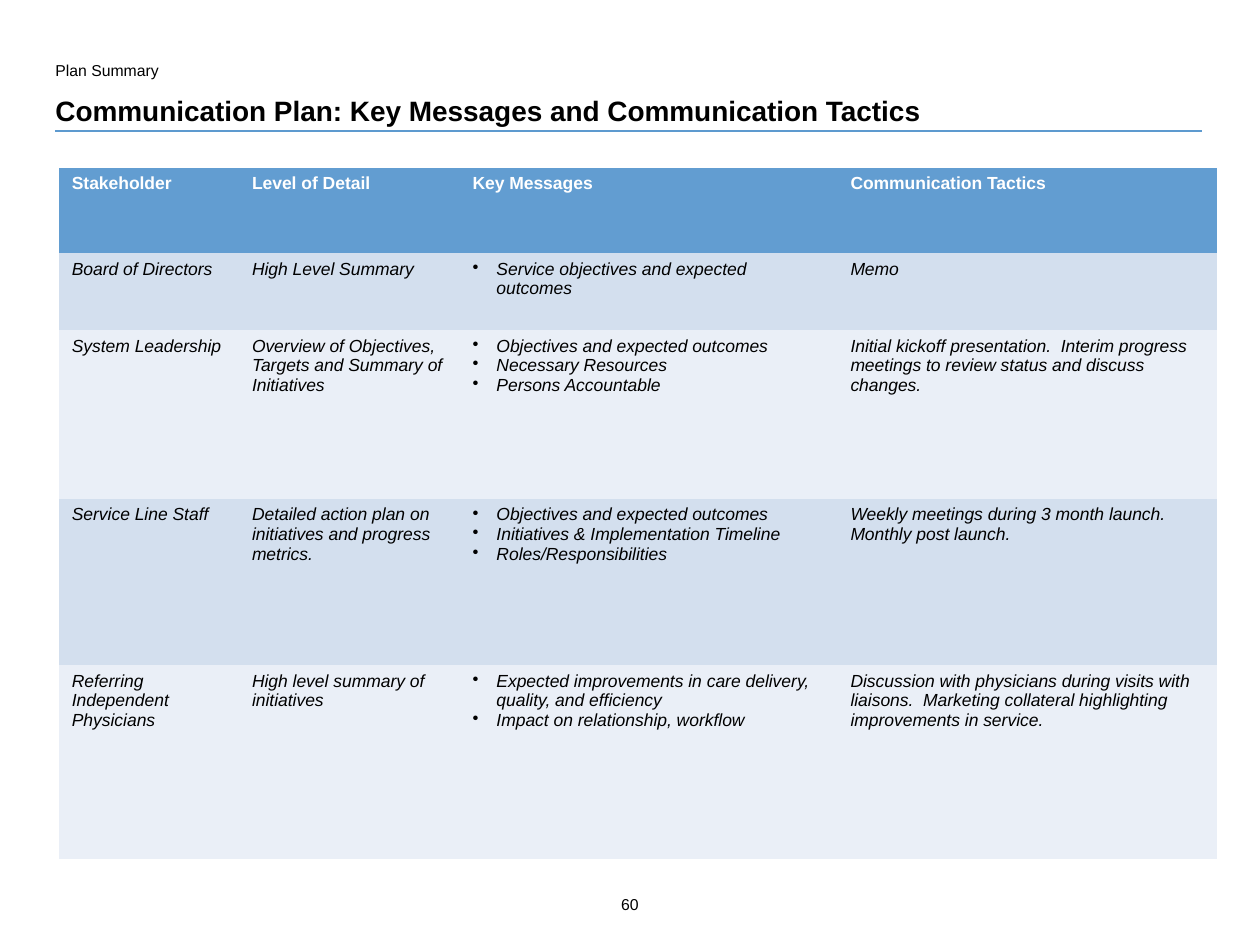
"""Build the communication plan slide with its stakeholder table."""
from lxml import etree
from pptx import Presentation
from pptx.dml.color import RGBColor
from pptx.enum.shapes import MSO_CONNECTOR
from pptx.enum.text import MSO_ANCHOR, MSO_AUTO_SIZE, PP_ALIGN
from pptx.oxml.ns import qn
from pptx.util import Inches, Pt

STRAIGHT = MSO_CONNECTOR.STRAIGHT
TOP, BOTTOM = MSO_ANCHOR.TOP, MSO_ANCHOR.BOTTOM
LEFT, CENTER = PP_ALIGN.LEFT, PP_ALIGN.CENTER
NO_GRID = "{2D5ABB26-0587-4C30-8999-92F81FD0307C}"
HEADER_FILL, BANDS = "629DD1", ("D3DFEE", "EAEFF7")


def rgb(value):
    return RGBColor.from_string(value)


def write(tf, text, size=10, color="000000", bold=False, italic=False,
          align=LEFT, anchor=TOP, bullet=None):
    tf.vertical_anchor = anchor
    lines = [text] if isinstance(text, str) else text
    for i, line in enumerate(lines):
        p = tf.add_paragraph() if i else tf.paragraphs[0]
        p.alignment = align
        p.space_before = Pt(0)
        pPr = p._p.get_or_add_pPr()
        indent = Inches(0.19) if bullet else 0
        pPr.set("marL", str(indent))
        pPr.set("indent", str(-indent))
        if bullet:
            etree.SubElement(pPr, qn("a:buChar")).set("char", bullet)
        else:
            etree.SubElement(pPr, qn("a:buNone"))
        r = p.add_run()
        r.text = line
        r.font.name, r.font.size = "Arial", Pt(size)
        r.font.bold, r.font.italic = bold, italic
        r.font.color.rgb = rgb(color)


prs = Presentation()
prs.slide_width, prs.slide_height = Inches(10), Inches(7.5)
s = prs.slides.add_slide(prs.slide_layouts[1])

rule = s.shapes.add_connector(STRAIGHT, Inches(0.44), Inches(1.04), Inches(9.54), Inches(1.04))
rule.line.color.rgb = rgb("5D9ACF")
rule.line.width = Pt(0.75)
etree.SubElement(rule.element.spPr, qn("a:effectLst"))

title, section = s.shapes.title, s.placeholders[1]
number = s.shapes.add_textbox(0, 0, 0, 0)
for sp, box, margins, text, fmt in [
    (title, (0.44, 0.74, 9.09, 0.27), (0, 0),
     "Communication Plan: Key Messages and Communication Tactics",
     {"size": 16, "bold": True, "anchor": BOTTOM}),
    (section, (0.44, 0.44, 2.89, 0.2), (0, 0.04), "Plan Summary", {"size": 9}),
    (number, (4.66, 7.06, 0.68, 0.26), (0.04, 0.04), "60", {"size": 9, "align": CENTER}),
]:
    sp.left, sp.top, sp.width, sp.height = map(Inches, box)
    tf = sp.text_frame
    tf.word_wrap, tf.auto_size = True, MSO_AUTO_SIZE.NONE
    tf.margin_left = tf.margin_right = Inches(margins[0])
    tf.margin_top = tf.margin_bottom = Inches(margins[1])
    write(tf, text, **fmt)

rows = [
    ("Stakeholder", "Level of Detail", "Key Messages", "Communication Tactics"),
    ("Board of Directors", "High Level Summary",
     ["Service objectives and expected outcomes"], "Memo"),
    ("System Leadership", "Overview of Objectives, Targets and Summary of Initiatives",
     ["Objectives and expected outcomes", "Necessary Resources", "Persons Accountable"],
     "Initial kickoff presentation.  Interim progress meetings to review status "
     "and discuss changes."),
    ("Service Line Staff", "Detailed action plan on initiatives and progress metrics.",
     ["Objectives and expected outcomes", "Initiatives & Implementation Timeline",
      "Roles/Responsibilities"],
     "Weekly meetings during 3 month launch.  Monthly post launch."),
    ("Referring Independent Physicians", "High level summary of initiatives",
     ["Expected improvements in care delivery, quality, and efficiency",
      "Impact on relationship, workflow"],
     "Discussion with physicians during visits with liaisons.  Marketing collateral "
     "highlighting improvements in service."),
]
widths = [1.43, 1.75, 3, 3.01]
heights = [0.68, 0.61, 1.34, 1.32, 1.54]
frame = s.shapes.add_table(len(rows), len(widths), Inches(0.47), Inches(1.33),
                           Inches(sum(widths)), Inches(sum(heights)))
table = frame.table
next(frame.element.iter(qn("a:tableStyleId"))).text = NO_GRID
for column, width in zip(table.columns, widths):
    column.width = Inches(width)
for i, (row, height) in enumerate(zip(rows, heights)):
    table.rows[i].height = Inches(height)
    for j, text in enumerate(row):
        cell = table.cell(i, j)
        cell.fill.solid()
        cell.fill.fore_color.rgb = rgb(BANDS[(i - 1) % 2] if i else HEADER_FILL)
        write(cell.text_frame, text, color="000000" if i else "FFFFFF", bold=i == 0,
              italic=i > 0, bullet="•" if isinstance(text, list) else None)

prs.save("out.pptx")
